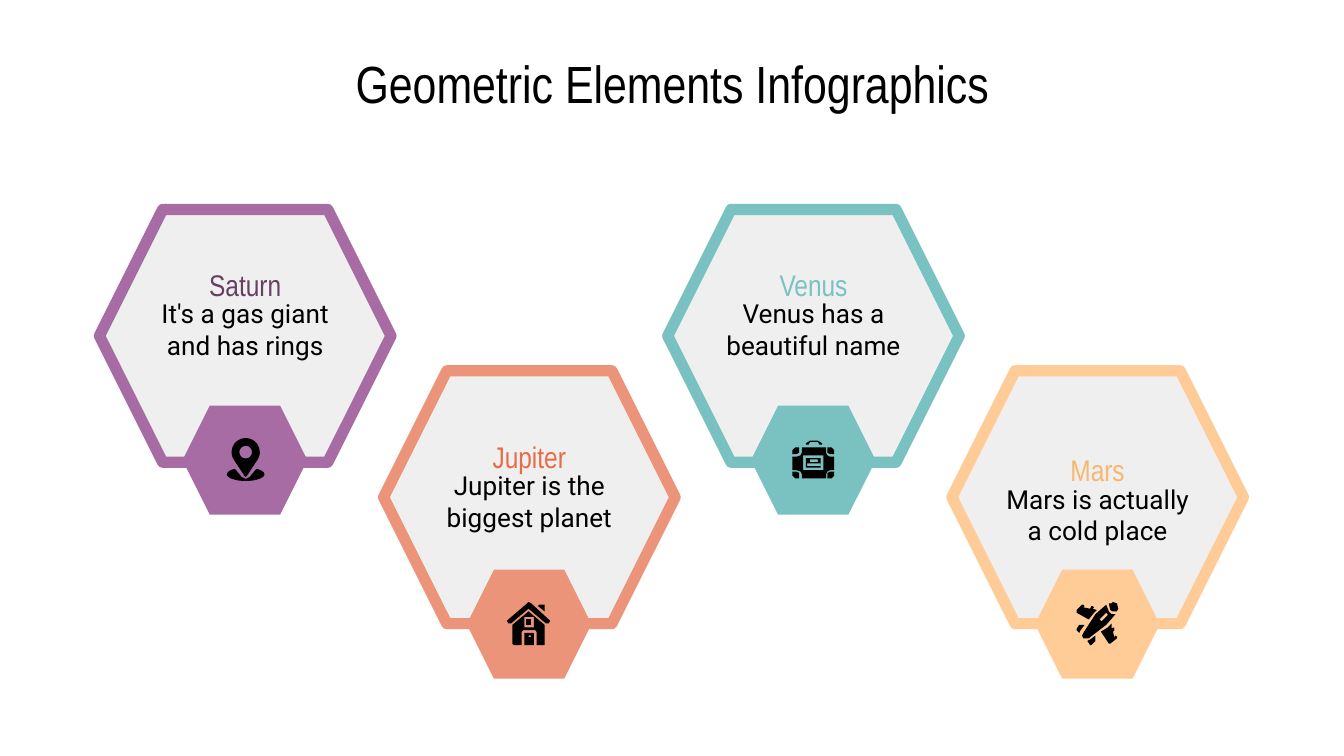
from math import cos, radians, sin

from pptx import Presentation
from pptx.dml.color import RGBColor as RGB
from pptx.enum.shapes import MSO_SHAPE as SHAPE
from pptx.enum.text import MSO_ANCHOR as ANCHOR, PP_ALIGN as ALIGN
from pptx.util import Cm, Pt

THEME = {
    "ink": "000000", "panel": "EFEFEF",
    "display": "Arial Narrow", "text": "Roboto",
    "title_size": 28, "label_size": 16, "body_size": 14, "outline": 6,
}


def oval(cx, cy, rx, ry, start=0, end=360):
    angles = [radians(start + (end - start) * i / 24) for i in range(25)]
    return [(cx + rx * cos(a), cy + ry * sin(a)) for a in angles]


def box(left, top, right, bottom):
    return [(left, top), (right, top), (right, bottom), (left, bottom)]


corner = [(31, 36), (31, 33), (33, 31), (36, 31), (36, 35), (34, 36)]
corners = [
    [[(93 - x if flip_x else x, 85 - y if flip_y else y) for x, y in corner]]
    for flip_x in (False, True) for flip_y in (False, True)
]

pin = [
    [oval(47, 34.5, 10.5, 10.5, 145, 395) + [(48, 52), (47, 53), (46, 52)],
     oval(47, 34.5, 4.7, 4.7)],
    [oval(47, 51, 14, 5, -55, 235) + [(44, 53), (47, 54.5), (50, 53)]],
]
house = [
    [[(53, 27), (54, 26), (58, 26), (58, 31)]],
    [box(43, 47, 50, 56), oval(47, 49.5, 1, 0.7)],
    [box(44, 37, 48, 41)],
    [[(46, 24), (45, 25), (31, 37), (30, 38), (31, 40), (33, 40), (46, 29),
      (59, 40), (61, 40), (62, 38), (61, 37), (48, 25)]],
    [[(46, 31), (34, 41), (34, 55), (35, 56), (41, 56), (41, 46), (42, 45),
      (51, 45), (52, 46), (52, 56), (58, 56), (58, 41)],
     box(43, 35, 50, 43)],
]
suitcase = corners + [
    [box(41, 39, 52, 46), box(44, 40, 50, 42), box(42, 43, 52, 45)],
    [[(38, 31), (38, 35), (37, 37), (34, 38), (31, 38), (31, 48), (34, 48),
      (37, 49), (38, 51), (38, 54), (56, 54), (56, 51), (57, 49), (59, 48),
      (62, 48), (62, 38), (59, 38), (57, 37), (56, 35), (56, 31)],
     box(39, 37, 54, 48)],
    [[(41, 29), (41, 28), (44, 26), (50, 26), (53, 28), (53, 29), (51, 29),
      (50, 27), (44, 27), (43, 29)]],
]
plane = [
    [[(34, 41), (33, 41), (31, 44), (31, 45), (33, 47), (34, 45), (37, 41)]],
    [[(57, 40), (54, 43), (49, 46), (55, 55), (56, 55), (61, 51), (61, 50),
      (60, 49), (59, 50), (58, 46), (59, 45), (59, 43), (58, 43), (57, 44)]],
    [[(36, 26), (35, 26), (31, 30), (31, 32), (40, 37), (44, 32), (46, 30),
      (43, 29), (44, 28), (43, 27), (42, 27), (41, 29), (36, 28), (37, 27)]],
    [[(45, 49), (41, 52), (39, 53), (41, 56), (42, 56), (45, 53)]],
    [[(58, 24), (57, 25), (55, 25), (56, 30), (58, 31), (61, 31), (62, 29),
      (61, 25)]],
    [[(53, 26), (45, 33), (36, 47), (35, 49), (36, 51), (38, 51), (40, 51),
      (53, 41), (60, 33), (57, 33), (55, 31)],
     [(53, 32), (54, 33), (54, 34), (50, 38), (49, 38), (48, 37), (52, 33)]],
]

planets = [
    ("Saturn", "It's a gas giant and has rings", "A86CA5", "644162", 5.61, pin),
    ("Jupiter", "Jupiter is the biggest planet", "EB9479", "E76D48", 8.86, house),
    ("Venus", "Venus has a beautiful name", "79C2C1", "79C2C1", 5.61, suitcase),
    ("Mars", "Mars is actually a cold place", "FFCC97", "F9B671", 9.12, plane),
]

prs = Presentation()
prs.slide_width, prs.slide_height = Cm(25.4), Cm(14.29)
s = prs.slides.add_slide(prs.slide_layouts[5])
title = s.shapes.title
title.left, title.top, title.width, title.height = Cm(1), Cm(0.71), Cm(23.4), Cm(1.6)
texts = [(title, "Geometric Elements Infographics", "display", "title_size",
          THEME["ink"], ANCHOR.TOP)]
fills = []

for i, (name, fact, color, label_color, fact_top, icon) in enumerate(planets):
    left = 1.88 + 5.37 * i
    top, badge_top = [(3.96, 7.67), (7.01, 10.77)][i % 2]
    panel = s.shapes.add_shape(SHAPE.HEXAGON, Cm(left), Cm(top), Cm(5.51), Cm(4.78))
    panel.line.color.rgb = RGB.from_string(color)
    panel.line.width = Pt(THEME["outline"])
    badge = s.shapes.add_shape(
        SHAPE.HEXAGON, Cm(left + 1.57), Cm(badge_top), Cm(2.36), Cm(2.06))
    badge.line.fill.background()
    fills += [(panel, THEME["panel"]), (badge, color)]

    fact_box = s.shapes.add_textbox(Cm(left + 0.75), Cm(fact_top), Cm(4.01), Cm(1.22))
    label = s.shapes.add_textbox(
        Cm(left + 0.75), Cm(fact_top - 0.58), Cm(4.01), Cm(0.69))
    texts += [
        (fact_box, fact, "text", "body_size", THEME["ink"], ANCHOR.MIDDLE),
        (label, name, "display", "label_size", label_color, ANCHOR.MIDDLE),
    ]

    for outlines in icon:
        points = [[(x * 10, y * 10) for x, y in outline] for outline in outlines]
        builder = s.shapes.build_freeform(*points[0][0], scale=Cm(2.54) / 1000)
        builder.add_line_segments(points[0][1:])
        for hole in points[1:]:
            builder.move_to(*hole[0])
            builder.add_line_segments(hole[1:])
        part = builder.convert_to_shape(badge.left, badge.top)
        part.line.fill.background()
        fills.append((part, THEME["ink"]))

for sp, color in fills:
    sp.shadow.inherit = False
    sp.fill.solid()
    sp.fill.fore_color.rgb = RGB.from_string(color)

for sp, text, font, size, color, anchor in texts:
    tf = sp.text_frame
    frame = {"word_wrap": True, "vertical_anchor": anchor}
    frame.update({f"margin_{side}": Cm(0.25)
                  for side in ("left", "right", "top", "bottom")})
    for key, value in frame.items():
        setattr(tf, key, value)
    p = tf.paragraphs[0]
    p.alignment = ALIGN.CENTER
    r = p.add_run()
    r.text = text
    for key, value in {"name": THEME[font], "size": Pt(THEME[size])}.items():
        setattr(r.font, key, value)
    r.font.color.rgb = RGB.from_string(color)

prs.save("out.pptx")
